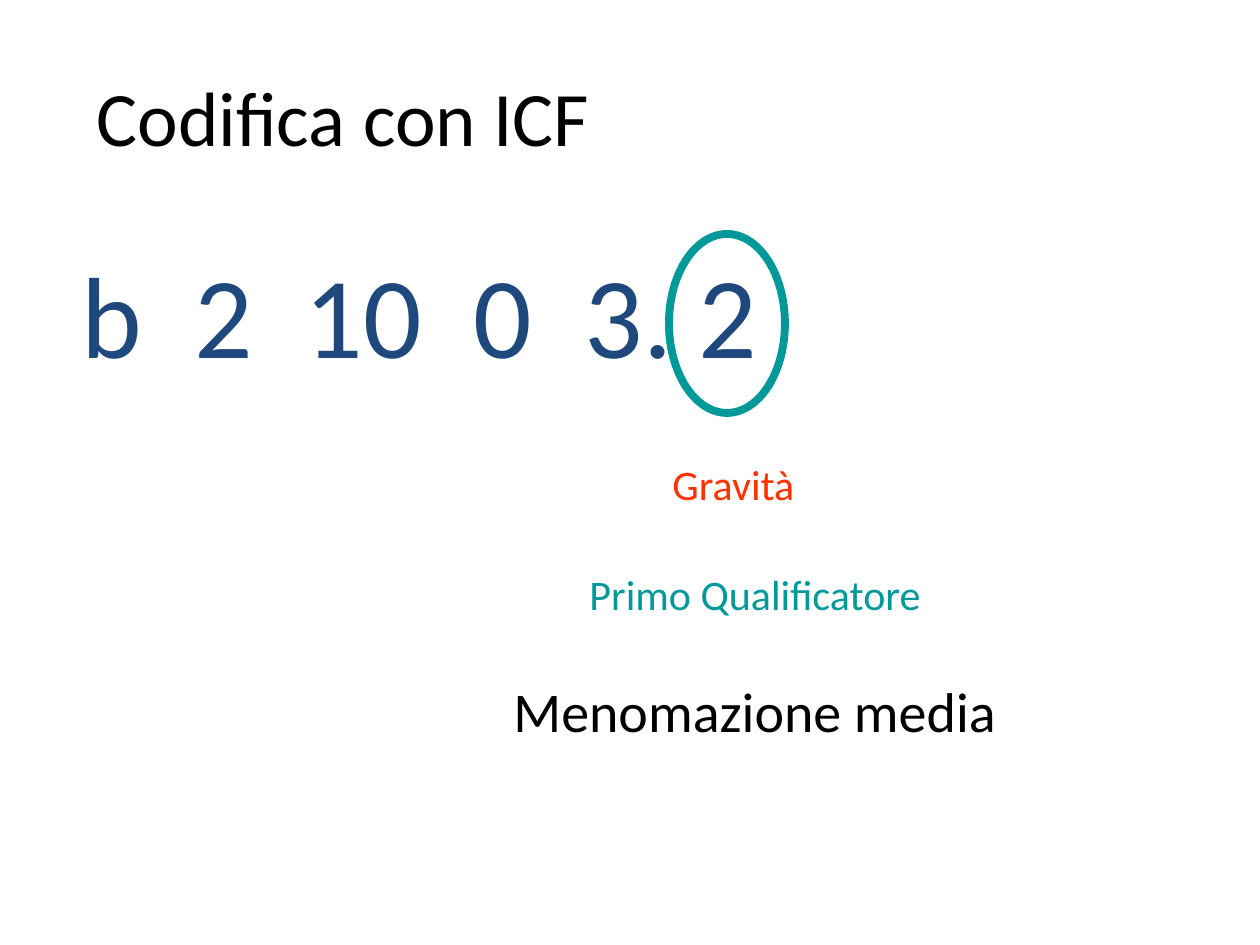
"""Builds the slide that explains the first qualifier of an ICF code."""
from dataclasses import dataclass

from pptx import Presentation
from pptx.dml.color import RGBColor
from pptx.enum.shapes import MSO_SHAPE
from pptx.enum.text import MSO_ANCHOR, MSO_AUTO_SIZE, PP_ALIGN
from pptx.util import Pt

EMU_PER_PX = 914400 / 126


def px(n):
    return round(n * EMU_PER_PX)


@dataclass(frozen=True)
class Theme:
    font: str = "Calibri"
    white: str = "FFFFFF"
    black: str = "000000"
    navy: str = "1F497D"
    teal: str = "009999"
    red: str = "FF3300"
    code: int = 66
    title: int = 44
    result: int = 32
    label: int = 24
    ring: float = 4.5


class Builder:
    def __init__(self, slide, theme):
        self.s = slide
        self.theme = theme

    def set_text(self, sp, text, size, color, align, anchor):
        tf = sp.text_frame
        tf.word_wrap = True
        tf.auto_size = MSO_AUTO_SIZE.NONE
        tf.vertical_anchor = anchor
        p = tf.paragraphs[0]
        p.text = text
        p.alignment = align
        p.font.name = self.theme.font
        p.font.size = Pt(size)
        p.font.color.rgb = RGBColor.from_string(color)

    def title(self, text, x, y, w, h):
        sp = self.s.shapes.title
        sp.left, sp.top, sp.width, sp.height = map(px, (x, y, w, h))
        sp.fill.solid()
        sp.fill.fore_color.rgb = RGBColor.from_string(self.theme.white)
        self.set_text(sp, text, self.theme.title, self.theme.black,
                      PP_ALIGN.LEFT, MSO_ANCHOR.MIDDLE)

    def text(self, text, x, y, w, h, size, color, align=PP_ALIGN.LEFT):
        sp = self.s.shapes.add_textbox(*map(px, (x, y, w, h)))
        self.set_text(sp, text, size, color, align, MSO_ANCHOR.TOP)

    def ring(self, x, y, w, h, color):
        sp = self.s.shapes.add_shape(MSO_SHAPE.OVAL, *map(px, (x, y, w, h)))
        sp.shadow.inherit = False
        sp.fill.background()
        sp.line.color.rgb = RGBColor.from_string(color)
        sp.line.width = Pt(self.theme.ring)


def main():
    prs = Presentation()
    prs.slide_width, prs.slide_height = px(1260), px(945)
    t = Theme()
    b = Builder(prs.slides.add_slide(prs.slide_layouts[5]), t)

    b.title("Codifica con ICF", 84, 53, 920, 126)
    b.text("b  2  10  0  3. 2", 69, 237, 1040, 158, t.code, t.navy)
    b.text("Gravità", 620, 452, 227, 84, t.label, t.red, PP_ALIGN.CENTER)
    b.text("Primo Qualificatore", 530, 562, 450, 84, t.label, t.teal, PP_ALIGN.CENTER)
    b.text("Menomazione media", 501, 670, 581, 84, t.result, t.black)
    b.ring(669, 234, 116, 179, t.teal)

    prs.save("out.pptx")


if __name__ == "__main__":
    main()
